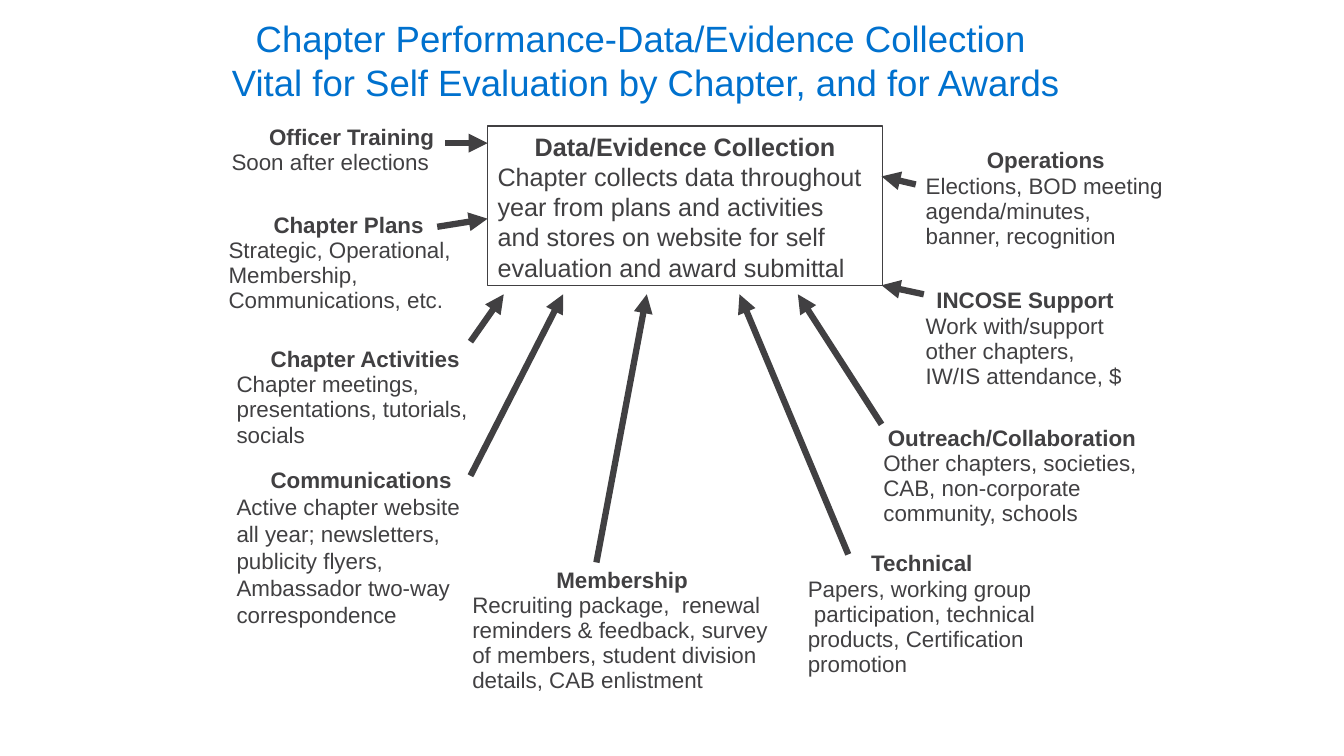
from dataclasses import dataclass

from lxml.etree import SubElement
from pptx import Presentation
from pptx.dml.color import RGBColor
from pptx.enum.shapes import MSO_CONNECTOR, MSO_SHAPE
from pptx.enum.text import MSO_ANCHOR, PP_ALIGN
from pptx.oxml.ns import qn
from pptx.util import Pt

PX = 9144  # 100 px to the inch


@dataclass(frozen=True)
class Theme:
    font: str = "Arial"
    title_color: RGBColor = RGBColor(0x00, 0x71, 0xCE)
    ink: RGBColor = RGBColor(0x41, 0x40, 0x42)
    title_size: float = 26.1
    hub_size: int = 18
    topic_size: int = 16
    arrow_width: float = 4.5
    hub_line: float = 0.75
    single: float = 1.0
    tight: Pt = Pt(18)


THEME = Theme()

TITLE = ["Chapter Performance-Data/Evidence Collection ",
         "Vital for Self Evaluation by Chapter, and for Awards"]

HUB = ("Data/Evidence Collection",
       "Chapter collects data throughout year from plans and activities "
       "and stores on website for self evaluation and award submittal")

# left, top, width, height, line spacing, heading, detail
TOPICS = [
    (220, 119, 258, 61, THEME.tight, "Officer Training", "Soon after elections"),
    (217, 206, 258, 111, THEME.tight, "Chapter Plans",
     "Strategic, Operational, Membership, Communications, etc."),
    (225, 339, 275, 111, THEME.tight, "Chapter Activities",
     "Chapter meetings, presentations, tutorials, socials"),
    (225, 458, 267, 142, THEME.single, "Communications",
     "Active chapter website all year; newsletters, publicity flyers, "
     "Ambassador two-way correspondence"),
    (459, 558, 317, 136, THEME.tight, "Membership",
     "Recruiting package,  renewal reminders & feedback, survey of members, "
     "student division details, CAB enlistment"),
    (792, 542, 246, 136, THEME.tight, "Technical",
     "Papers, working group  participation, technical products, "
     "Certification promotion"),
    (867, 417, 275, 111, THEME.tight, "Outreach/Collaboration",
     "Other chapters, societies, CAB, non-corporate community, schools"),
    (909, 281, 217, 111, THEME.tight, "INCOSE Support",
     "Work with/support other chapters, IW/IS attendance, $"),
    (909, 142, 258, 111, THEME.tight, "Operations",
     "Elections, BOD meeting agenda/minutes, banner, recognition"),
]

# start x, start y, end x, end y
ARROWS = [
    (442, 142, 484, 142),
    (434, 225, 484, 217),
    (467, 339, 500, 292),
    (467, 472, 559, 292),
    (592, 558, 642, 292),
    (842, 550, 734, 292),
    (875, 421, 792, 292),
    (917, 292, 875, 283),
    (909, 183, 875, 175),
]


def px(*lengths):
    return [length * PX for length in lengths]


def write_line(para, text, size, color, spacing, bold=False, centred=False):
    para.text = text
    para.alignment = PP_ALIGN.CENTER if centred else PP_ALIGN.LEFT
    para.line_spacing = spacing
    for span in para.runs:
        span.font.name = THEME.font
        span.font.size = Pt(size)
        span.font.bold = bold
        span.font.color.rgb = color


def write_topic(box, heading, detail, size, spacing):
    """Fill a box with a bold centred heading above a left-aligned detail."""
    frame = box.text_frame
    frame.word_wrap = True
    frame.vertical_anchor = MSO_ANCHOR.TOP
    write_line(frame.paragraphs[0], heading, size, THEME.ink, spacing,
               bold=True, centred=True)
    write_line(frame.add_paragraph(), detail, size, THEME.ink, spacing)


def add_title(page):
    box = page.shapes.add_textbox(*px(200, 43, 883, 67))
    frame = box.text_frame
    frame.word_wrap = True
    frame.vertical_anchor = MSO_ANCHOR.BOTTOM
    frame.margin_left, frame.margin_right = px(13, 13)
    frame.margin_top, frame.margin_bottom = px(7, 7)
    for index, line in enumerate(TITLE):
        para = frame.add_paragraph() if index else frame.paragraphs[0]
        write_line(para, line, THEME.title_size, THEME.title_color,
                   THEME.single, centred=True)


def add_hub(page):
    box = page.shapes.add_shape(MSO_SHAPE.RECTANGLE, *px(484, 125, 392, 158))
    box.shadow.inherit = False
    box.fill.background()
    box.line.color.rgb = THEME.ink
    box.line.width = Pt(THEME.hub_line)
    write_topic(box, *HUB, THEME.hub_size, THEME.single)


def add_topic(page, left, top, width, height, spacing, heading, detail):
    box = page.shapes.add_textbox(*px(left, top, width, height))
    write_topic(box, heading, detail, THEME.topic_size, spacing)


def add_arrow(page, *ends):
    arrow = page.shapes.add_connector(MSO_CONNECTOR.STRAIGHT, *px(*ends))
    arrow.line.color.rgb = THEME.ink
    arrow.line.width = Pt(THEME.arrow_width)
    SubElement(arrow.line._get_or_add_ln(), qn("a:tailEnd"), type="triangle")
    SubElement(arrow._element.spPr, qn("a:effectLst"))


def main():
    deck = Presentation()
    deck.slide_width, deck.slide_height = px(1334, 750)
    page = deck.slides.add_slide(deck.slide_layouts[6])
    add_title(page)
    add_hub(page)
    for topic in TOPICS:
        add_topic(page, *topic)
    for ends in ARROWS:
        add_arrow(page, *ends)
    deck.save("out.pptx")


if __name__ == "__main__":
    main()
